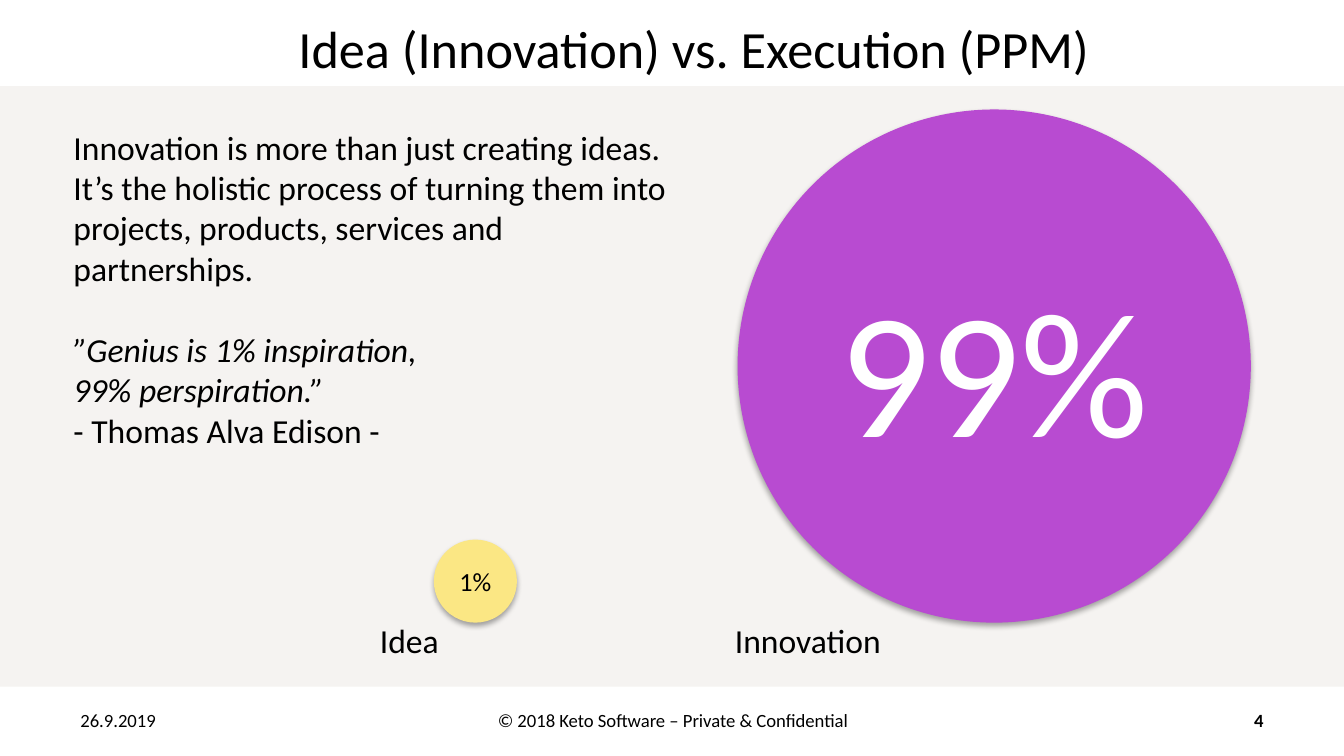
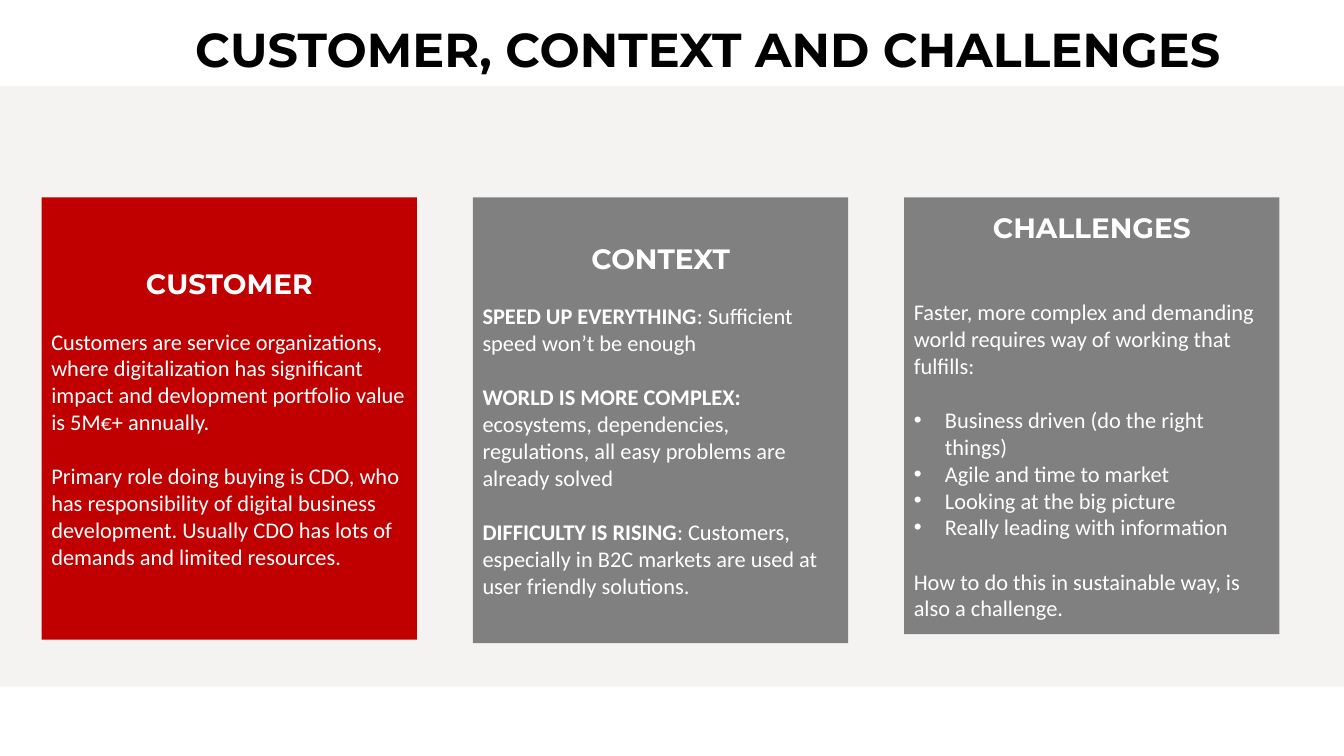
from lxml import etree
from pptx import Presentation
from pptx.dml.color import RGBColor
from pptx.enum.shapes import MSO_SHAPE
from pptx.enum.text import MSO_ANCHOR, MSO_AUTO_SIZE, PP_ALIGN
from pptx.oxml.ns import qn
from pptx.util import Cm, Pt

RECTANGLE, OVAL = MSO_SHAPE.RECTANGLE, MSO_SHAPE.OVAL
LEFT, CENTER, RIGHT = PP_ALIGN.LEFT, PP_ALIGN.CENTER, PP_ALIGN.RIGHT
TOP, MIDDLE = MSO_ANCHOR.TOP, MSO_ANCHOR.MIDDLE
NO_FIT = MSO_AUTO_SIZE.NONE

# Shared look
BLACK, WHITE = "000000", "FFFFFF"
BAND, RED, GRAY = "F5F3F1", "C00000", "808080"
PURPLE, YELLOW = "B84BD1", "FBE784"
BODY_FONT, HEAD_FONT = "Calibri", "Montserrat"
PAGE_WIDTH, PAGE_HEIGHT = 25.4, 14.29
TITLE_ONLY = 5
WIDE_INSETS, CARD_INSETS, NO_INSETS = (0.25, 0.13), (0.18, 0.1), (0, 0)
CARD_GAP, QUOTE_GAP = 14.6, 22  # one line of 12 pt and of 18 pt text


def color(hex_code):
    return RGBColor.from_string(hex_code)


def add_xml(parent, tag, **attributes):
    return etree.SubElement(parent, qn(tag), attributes)


def add_bullet(para):
    properties = para._p.get_or_add_pPr()
    properties.set("marL", str(Cm(0.59)))
    properties.set("indent", str(-Cm(0.59)))
    add_xml(add_xml(properties, "a:buClr"), "a:srgbClr", val=WHITE)
    add_xml(properties, "a:buFont", typeface="Arial")
    add_xml(properties, "a:buChar", char="•")


def write_para(para, text, size=18, font=BODY_FONT, ink=BLACK, bold=False,
               italic=False, align=LEFT, gap=0, spacing=None, bullet=False):
    """Text is a string, or a list of (text, bold) spans."""
    if bullet:
        add_bullet(para)
    para.alignment = align
    para.space_before = Pt(gap)
    if spacing:
        para.line_spacing = spacing
    spans = [(text, bold)] if isinstance(text, str) else text
    for words, heavy in spans:
        span = para.add_run()
        span.text = words
        span.font.name = font
        span.font.size = Pt(size)
        span.font.bold = heavy
        span.font.italic = italic
        span.font.color.rgb = color(ink)


def write_text(shape, paras, anchor=MIDDLE, insets=WIDE_INSETS, wrap=True, **style):
    """Each para is (text, overrides of the style)."""
    frame = shape.text_frame
    frame.auto_size = NO_FIT
    frame.word_wrap = wrap
    frame.vertical_anchor = anchor
    frame.margin_left = frame.margin_right = Cm(insets[0])
    frame.margin_top = frame.margin_bottom = Cm(insets[1])
    for index, (text, changes) in enumerate(paras):
        para = frame.add_paragraph() if index else frame.paragraphs[0]
        write_para(para, text, **{**style, **changes})


def add_text(page, box, text, **style):
    shape = page.shapes.add_textbox(*map(Cm, box))
    paras = [(text, {})] if isinstance(text, str) else text
    write_text(shape, paras, **style)


def add_block(page, kind, box, fill):
    shape = page.shapes.add_shape(kind, *map(Cm, box))
    shape.shadow.inherit = False
    shape.fill.solid()
    shape.fill.fore_color.rgb = color(fill)
    shape.line.fill.background()
    return shape


def add_page(deck, title, title_box, **style):
    """Start a page with the shared band and a title."""
    page = deck.slides.add_slide(deck.slide_layouts[TITLE_ONLY])
    band = add_block(page, RECTANGLE, (0, 1.63, PAGE_WIDTH, 11.35), BAND)
    page.shapes._spTree.insert(2, band._element)
    heading = page.shapes.title
    heading.left, heading.top, heading.width, heading.height = map(Cm, title_box)
    write_text(heading, [(title, {})], **style)
    return page


def add_footer(page, date, notice, number):
    top, height = 13.23, 0.76
    add_text(page, (1.27, top, 4.04, height), date, size=10)
    add_text(page, (8.69, top, 8.05, height), notice, size=10, align=CENTER)
    add_text(page, (22.68, top, 1.45, height), number, size=10, bold=True, align=RIGHT)


def add_share_circle(page, left, bottom, diameter, fill, share, **style):
    box = (left, bottom - diameter, diameter, diameter)
    circle = add_block(page, OVAL, box, fill)
    effects = circle._element.spPr.find(qn("a:effectLst"))
    shadow = add_xml(effects, "a:outerShdw", blurRad=str(Pt(3.1)), dist=str(Pt(1.8)),
                     dir="5400000", rotWithShape="0")
    add_xml(add_xml(shadow, "a:srgbClr", val=BLACK), "a:alpha", val="35000")
    write_text(circle, [(share, {})], insets=NO_INSETS, align=CENTER, **style)


def add_card(page, box, fill, heading, paras, heading_gap=CARD_GAP):
    card = add_block(page, RECTANGLE, box, fill)
    title = (heading, dict(size=15, font=HEAD_FONT, bold=True, align=CENTER))
    first = (paras[0][0], dict(gap=heading_gap))
    write_text(card, [title, first, *paras[1:]], insets=CARD_INSETS, size=12, ink=WHITE)


def build_idea_page(deck):
    page = add_page(deck, "Idea (Innovation) vs. Execution (PPM)",
                    (2.57, 0.41, 21.08, 0.99), size=28, align=CENTER)

    # Circles and their labels
    bottom = 11.77
    add_share_circle(page, 8.2, bottom, 1.57, YELLOW, "1%", size=14)
    add_share_circle(page, 13.94, bottom, 9.7, PURPLE, "99%", size=96, ink=WHITE)
    for left, width, label in ((6.93, 1.75, "Idea"), (13.64, 3.53, "Innovation")):
        add_text(page, (left, 11.58, width, 1.02), label, anchor=TOP, wrap=False)

    # Statement and quotation
    add_text(page, (1.14, 1.93, 11.96, 7.04), [
        ("Innovation is more than just creating ideas. It’s the holistic process of "
         "turning them into projects, products, services and partnerships.", {}),
        ("”Genius is 1% inspiration,", dict(italic=True, gap=QUOTE_GAP)),
        ("99% perspiration.”", dict(italic=True)),
        ("- Thomas Alva Edison -", {}),
    ])
    add_footer(page, "26.9.2019", "© 2018 Keto Software – Private & Confidential", "4")


def build_customer_page(deck):
    page = add_page(deck, "CUSTOMER, CONTEXT AND CHALLENGES",
                    (3.51, -0.41, 21.89, 2.77), size=25.5, font=HEAD_FONT,
                    bold=True, spacing=0.9, insets=CARD_INSETS)
    spaced, bullet = dict(gap=CARD_GAP), dict(bullet=True)
    customer = [
        ("Customers are service organizations, where digitalization has significant "
         "impact and devlopment portfolio value is 5M€+ annually.", {}),
        ("Primary role doing buying is CDO, who has responsibility of digital business "
         "development. Usually CDO has lots of demands and limited resources.", spaced),
    ]
    context = [
        ([("SPEED UP EVERYTHING", True),
          (": Sufficient speed won’t be enough", False)], {}),
        ([("WORLD IS MORE COMPLEX: ", True),
          ("ecosystems, dependencies, regulations, all easy problems are "
           "already solved", False)], spaced),
        ([("DIFFICULTY IS RISING", True),
          (": Customers, especially in B2C markets are used at user friendly "
           "solutions.", False)], spaced),
    ]
    challenges = [
        ("Faster, more complex and demanding world requires way of working that "
         "fulfills:", {}),
        ("Business driven (do the right things)", {**bullet, **spaced}),
        ("Agile and time to market", bullet),
        ("Looking at the big picture", bullet),
        ("Really leading with information", bullet),
        ("How to do this in sustainable way, is also a challenge.", spaced),
    ]

    # Three cards at an equal pitch
    cards = (
        (8.36, RED, "CUSTOMER", customer, CARD_GAP),
        (8.43, GRAY, "CONTEXT", context, CARD_GAP),
        (8.26, GRAY, "CHALLENGES", challenges, 2 * CARD_GAP),
    )
    for index, (height, *content) in enumerate(cards):
        add_card(page, (0.79 + 8.15 * index, 3.73, 7.09, height), *content)


def main():
    deck = Presentation()
    deck.slide_width, deck.slide_height = Cm(PAGE_WIDTH), Cm(PAGE_HEIGHT)
    build_idea_page(deck)
    build_customer_page(deck)
    deck.save("out.pptx")


if __name__ == "__main__":
    main()
